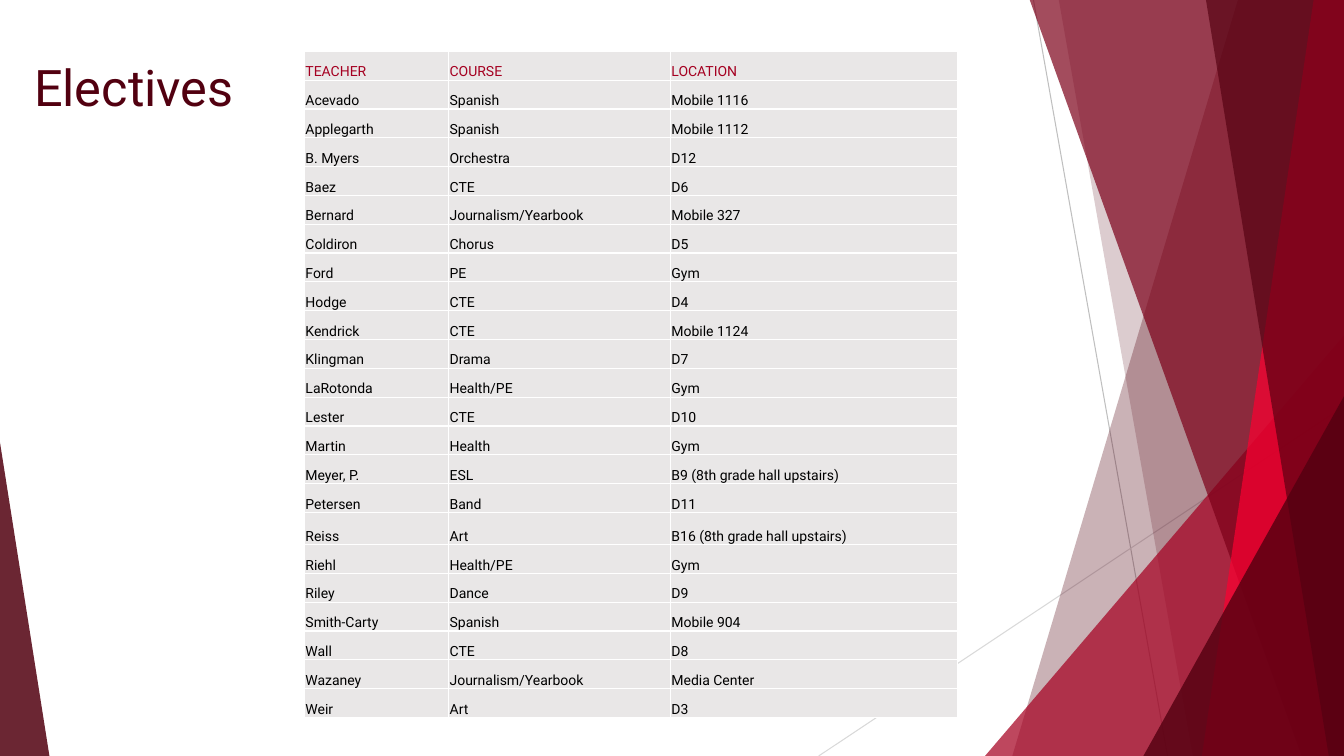
from dataclasses import dataclass

from lxml import etree
from pptx import Presentation
from pptx.dml.color import RGBColor
from pptx.enum.shapes import MSO_CONNECTOR, MSO_SHAPE
from pptx.enum.text import MSO_ANCHOR
from pptx.oxml.ns import qn
from pptx.util import Inches, Pt

STRAIGHT = MSO_CONNECTOR.STRAIGHT
TRIANGLE = MSO_SHAPE.ISOSCELES_TRIANGLE
BOTTOM = MSO_ANCHOR.BOTTOM
FONT = "Roboto"
COLORS = {
    "maroon": "520010",
    "wine": "7C0019",
    "crimson": "A50021",
    "scarlet": "FD0031",
    "gray": "BFBFBF",
    "light_gray": "D9D9D9",
    "cell": "E9E7E7",
    "white": "FFFFFF",
    "black": "000000",
}
WIDTH, HEIGHT = 13.33, 7.5
TABLE_TOP, TABLE_HEIGHT = 0.51, 6.61
COLUMN_WIDTHS = (1.43, 2.2, 2.85)
TALL_TEACHER, TALL_ROW = "Reiss", 0.32


@dataclass
class Ray:
    start: tuple[float, float]
    end: tuple[float, float]
    color: str


@dataclass
class Band:
    top_left: float
    bottom_left: float
    color: str
    opacity: int


@dataclass
class Wedge:
    left: float
    top: float
    width: float
    peak: float
    color: str
    opacity: int


@dataclass
class Elective:
    teacher: str
    course: str
    location: str


RAYS = [
    Ray((10.25, 0), (11.58, HEIGHT), "gray"),
    Ray((WIDTH, 4.03), (8.12, HEIGHT), "light_gray"),
]
FACETS = [
    Band(12.28, 10.04, "maroon", 30),
    Band(10.5, 11.83, "maroon", 20),
    Wedge(9.77, 3.33, 3.56, 1, "crimson", 72),
    Band(10.21, 12.91, "wine", 70),
    Band(13.03, 11.92, "scarlet", 70),
    Band(11.96, 13.18, "maroon", 65),
    Wedge(11.34, 3.93, 1.99, 1, "maroon", 80),
    Wedge(0, 4.39, 0.49, 0, "maroon", 85),
]
ELECTIVES = [
    Elective("TEACHER", "COURSE", "LOCATION"),
    Elective("Acevado", "Spanish", "Mobile 1116"),
    Elective("Applegarth", "Spanish", "Mobile 1112"),
    Elective("B. Myers", "Orchestra", "D12"),
    Elective("Baez", "CTE", "D6"),
    Elective("Bernard", "Journalism/Yearbook", "Mobile 327"),
    Elective("Coldiron", "Chorus", "D5"),
    Elective("Ford", "PE", "Gym"),
    Elective("Hodge", "CTE", "D4"),
    Elective("Kendrick", "CTE", "Mobile 1124"),
    Elective("Klingman", "Drama", "D7"),
    Elective("LaRotonda", "Health/PE", "Gym"),
    Elective("Lester", "CTE", "D10"),
    Elective("Martin", "Health", "Gym"),
    Elective("Meyer, P.", "ESL", "B9 (8th grade hall upstairs)"),
    Elective("Petersen", "Band", "D11"),
    Elective("Reiss", "Art", "B16 (8th grade hall upstairs)"),
    Elective("Riehl", "Health/PE", "Gym"),
    Elective("Riley", "Dance", "D9"),
    Elective("Smith-Carty", "Spanish", "Mobile 904"),
    Elective("Wall", "CTE", "D8"),
    Elective("Wazaney", "Journalism/Yearbook", "Media Center"),
    Elective("Weir", "Art", "D3"),
]


def rgb(name: str) -> RGBColor:
    return RGBColor.from_string(COLORS[name])


def set_text(tf, text: str, size: int, color: str) -> None:
    p = tf.paragraphs[0]
    p.text = text
    p.font.name = FONT
    p.font.size = Pt(size)
    p.font.color.rgb = rgb(color)


def add_ray(s, ray: Ray) -> None:
    line = s.shapes.add_connector(STRAIGHT, *map(Inches, ray.start + ray.end))
    line.line.color.rgb = rgb(ray.color)
    line.line.width = Pt(0.75)
    etree.SubElement(line._element.spPr, qn("a:effectLst"))


def add_band(s, band: Band):
    points = [
        (Inches(x), Inches(y))
        for x, y in (
            (band.top_left, -0.01),
            (WIDTH, -0.01),
            (WIDTH, HEIGHT),
            (band.bottom_left, HEIGHT),
        )
    ]
    builder = s.shapes.build_freeform(*points[0])
    builder.add_line_segments(points[1:], close=True)
    return builder.convert_to_shape()


def add_wedge(s, wedge: Wedge):
    sp = s.shapes.add_shape(
        TRIANGLE, Inches(wedge.left), Inches(wedge.top),
        Inches(wedge.width), Inches(HEIGHT - wedge.top),
    )
    sp.adjustments[0] = wedge.peak
    return sp


def add_facet(s, facet: Band | Wedge) -> None:
    sp = add_band(s, facet) if isinstance(facet, Band) else add_wedge(s, facet)
    sp.shadow.inherit = False
    sp.line.fill.background()
    sp.fill.solid()
    sp.fill.fore_color.rgb = rgb(facet.color)
    color = sp._element.spPr.find(qn("a:solidFill"))[0]
    etree.SubElement(color, qn("a:alpha"), val=str(facet.opacity * 1000))


def add_title(s) -> None:
    sp = s.shapes.add_textbox(Inches(0.24), Inches(0.51), Inches(9.4), Inches(1.44))
    sp.text_frame.word_wrap = True
    set_text(sp.text_frame, "Electives", 36, "maroon")


def style_cell(cell, text: str, color: str) -> None:
    tcPr = cell._tc.get_or_add_tcPr()
    for side in ("lnL", "lnR", "lnT", "lnB"):
        ln = etree.SubElement(tcPr, qn(f"a:{side}"), w=str(Pt(1)))
        fill = etree.SubElement(ln, qn("a:solidFill"))
        etree.SubElement(fill, qn("a:srgbClr"), val=COLORS["white"])
    cell.fill.solid()
    cell.fill.fore_color.rgb = rgb("cell")
    cell.vertical_anchor = BOTTOM
    cell.margin_left = cell.margin_right = cell.margin_top = Inches(0.01)
    cell.margin_bottom = 0
    set_text(cell.text_frame, text, 10, color)


def add_electives(s, electives: list[Elective]) -> None:
    table = s.shapes.add_table(
        len(electives), len(COLUMN_WIDTHS), Inches(3.02), Inches(TABLE_TOP),
        Inches(sum(COLUMN_WIDTHS)), Inches(TABLE_HEIGHT),
    ).table
    table.horz_banding = False
    for column, width in zip(table.columns, COLUMN_WIDTHS):
        column.width = Inches(width)
    row_height = (TABLE_HEIGHT - TALL_ROW) / (len(electives) - 1)
    for i, (row, e) in enumerate(zip(table.rows, electives)):
        row.height = Inches(TALL_ROW if e.teacher == TALL_TEACHER else row_height)
        for cell, text in zip(row.cells, (e.teacher, e.course, e.location)):
            style_cell(cell, text, "black" if i else "crimson")


def main() -> None:
    prs = Presentation()
    prs.slide_width, prs.slide_height = Inches(WIDTH), Inches(HEIGHT)
    s = prs.slides.add_slide(prs.slide_layouts[6])
    for ray in RAYS:
        add_ray(s, ray)
    for facet in FACETS:
        add_facet(s, facet)
    add_title(s)
    add_electives(s, ELECTIVES)
    prs.save("out.pptx")


if __name__ == "__main__":
    main()
